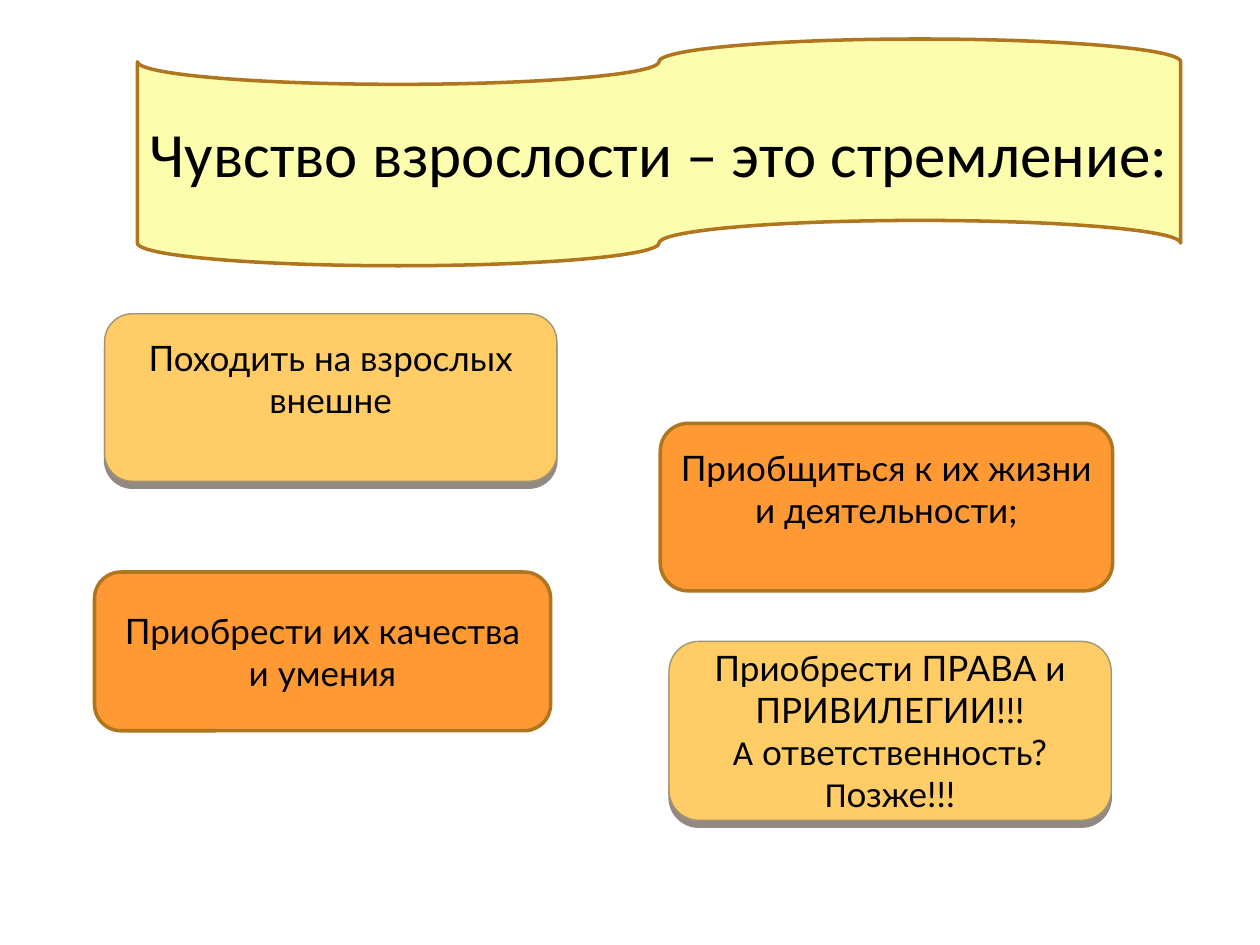
from lxml import etree
from pptx import Presentation
from pptx.dml.color import RGBColor
from pptx.enum import shapes, text
from pptx.oxml.ns import qn
from pptx.util import Inches, Pt

COLORS = {"cream": "FCFEAE", "gold": "FFCC66", "orange": "FF9933",
          "brown": "B0761F", "grey": "A19574", "shade": "4E3B30", "ink": "000000"}
KIND = shapes.MSO_SHAPE


def add_box(kind, place, fill, edge, width, lines, size, font):
    box = slide.shapes.add_shape(kind, *[Inches(n) for n in place])
    box.shadow.inherit = False
    box.fill.solid()
    box.fill.fore_color.rgb = RGBColor.from_string(COLORS[fill])
    box.line.color.rgb = RGBColor.from_string(COLORS[edge])
    box.line.width = Pt(width)
    frame = box.text_frame
    frame.word_wrap = True
    frame.vertical_anchor = text.MSO_ANCHOR.MIDDLE
    for i, line in enumerate(lines):
        para = frame.add_paragraph() if i else frame.paragraphs[0]
        para.alignment = text.PP_ALIGN.CENTER
        para.font.size = Pt(size)
        para.font.name = font
        para.font.color.rgb = RGBColor.from_string(COLORS["ink"])
        para.add_run().text = line
    return box


def add_shade(box):
    effects = box._element.spPr.find(qn("a:effectLst"))
    shade = etree.SubElement(effects, qn("a:outerShdw"), blurRad="0",
                             dist=str(Pt(4)), dir="5400000", rotWithShape="0")
    color = etree.SubElement(shade, qn("a:srgbClr"), val=COLORS["shade"])
    etree.SubElement(color, qn("a:alpha"), val="60000")


deck = Presentation()
deck.slide_width, deck.slide_height = Inches(10), Inches(7.5)
slide = deck.slides.add_slide(deck.slide_layouts[6])

# Heading on a waving banner, kept on one line
banner = add_box(KIND.FLOWCHART_PUNCHED_TAPE, (1.09, 0.31, 8.28, 1.8), "cream",
                 "brown", 2, ["Чувство взрослости – это стремление:"], 36, "Calibri")
banner.text_frame.word_wrap = False

# Cards: place, fill, bottom inset, lines
cards = [
    ((0.83, 2.49, 3.59, 1.33), "gold", 0.35, ["Походить на взрослых внешне"]),
    ((5.24, 3.36, 3.59, 1.33), "orange", 0.35, ["Приобщиться к их жизни и деятельности;"]),
    ((0.75, 4.54, 3.62, 1.26), "orange", 0.05, ["Приобрести их качества и умения"]),
    ((5.31, 5.09, 3.51, 1.42), "gold", 0.05,
     ["Приобрести ПРАВА и ПРИВИЛЕГИИ!!!", "А ответственность?", "Позже!!!"]),
]
for place, fill, inset, lines in cards:
    edge, width = ("grey", 0.79) if fill == "gold" else ("brown", 2)
    card = add_box(KIND.ROUNDED_RECTANGLE, place, fill, edge, width, lines, 20, "Lato")
    card.text_frame.margin_bottom = Inches(inset)
    if fill == "gold":
        add_shade(card)

# The first letters of the last card's closing lines use the heading font
for para in card.text_frame.paragraphs[1:]:
    first = para.runs[0]
    rest = para.add_run()
    rest.text = first.text[1:]
    first.text = first.text[0]
    first.font.name = "Calibri"

deck.save("out.pptx")
